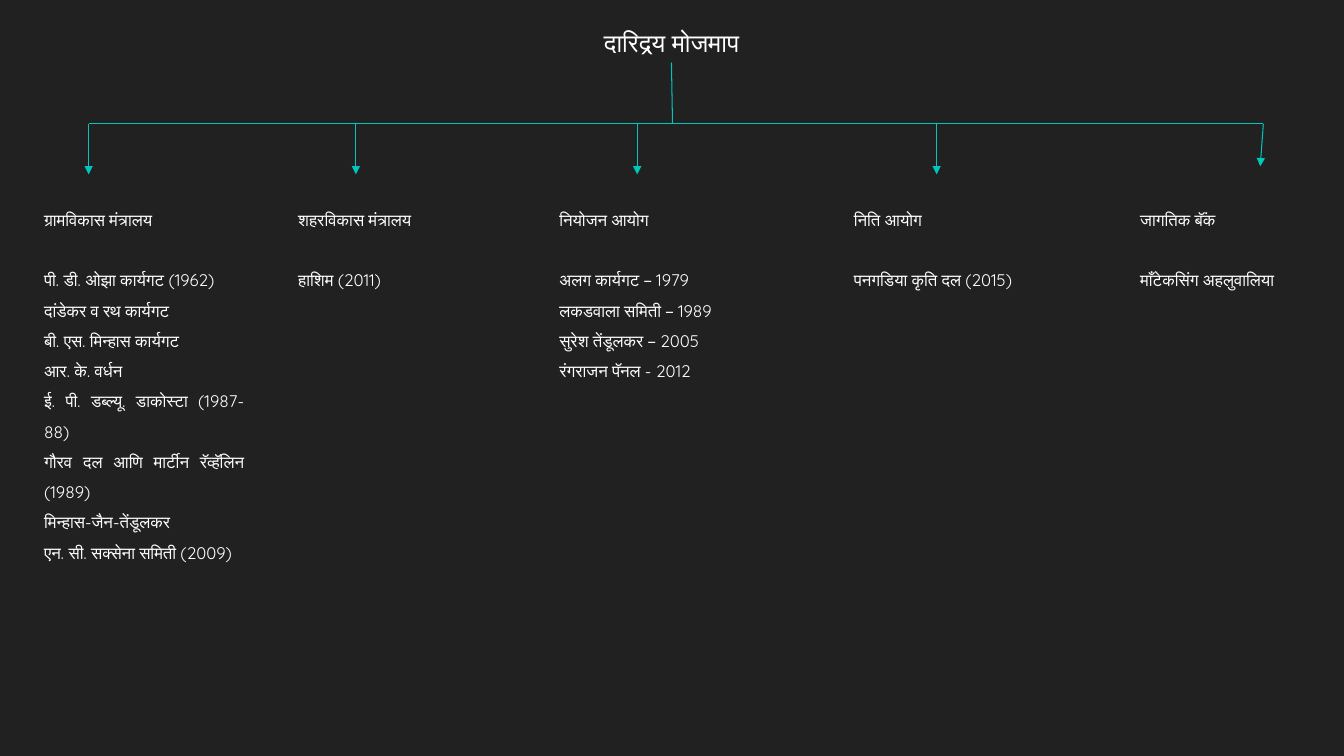
from dataclasses import dataclass

from pptx import Presentation, util as u
from pptx.dml.color import RGBColor
from pptx.enum import shapes, text
from pptx.oxml import ns, xmlchemy as xc


@dataclass(frozen=True)
class Theme:
    ground: RGBColor = RGBColor(0x21, 0x21, 0x21)
    ink: RGBColor = RGBColor(0xFF, 0xFF, 0xFF)
    accent: RGBColor = RGBColor(0x00, 0xC6, 0xBB)
    font: str = "Quicksand"
    title_size: u.Pt = u.Pt(18)
    body_size: u.Pt = u.Pt(12)
    heading_gap: u.Pt = u.Pt(21.6)
    line_width: u.Pt = u.Pt(0.75)
    line_spacing: float = 1.5


@dataclass(frozen=True)
class Branch:
    """One arrow and its column; lengths are per cent of the slide's size."""
    arrow_x: float
    left: float
    width: float
    heading: str
    entries: tuple[str, ...]
    wrapped_lines: int = 0
    tip_shift: float = 0
    tip_y: float = 23.07


THEME = Theme()
WIDTH, HEIGHT = u.Inches(13.33), u.Inches(7.5)
BAR_Y, COLUMN_TOP = 16.4, 25.73
LINE_HEIGHT, BOX_PADDING = 4.0, 1.33

TITLE = "दारिद्रय मोजमाप"
BRANCHES = (
    Branch(6.6, 2.55, 16.35, "ग्रामविकास मंत्रालय", (
        "पी. डी. ओझा कार्यगट (1962)",
        "दांडेकर व रथ कार्यगट",
        "बी. एस. मिन्हास कार्यगट",
        "आर. के. वर्धन",
        "ई. पी. डब्ल्यू. डाकोस्टा (1987-88)",
        "गौरव दल आणि मार्टीन रॅव्हॅलिन (1989)",
        "मिन्हास-जैन-तेंडूलकर",
        "एन. सी. सक्सेना समिती (2009)",
    ), wrapped_lines=2),
    Branch(26.48, 21.45, 11.55, "शहरविकास मंत्रालय", ("हाशिम (2011)",)),
    Branch(47.41, 40.88, 14.1, "नियोजन आयोग", (
        "अलग कार्यगट – 1979",
        "लकडवाला समिती – 1989",
        "सुरेश तेंडूलकर – 2005",
        "रंगराजन पॅनल - 2012",
    )),
    Branch(69.69, 62.79, 14.18, "निति आयोग", ("पनगडिया कृति दल (2015)",)),
    Branch(94, 84.1, 14.18, "जागतिक बॅंक", ("माँटेकसिंग अहलुवालिया",),
           tip_shift=-0.23, tip_y=22),
)


def across(share: float) -> int:
    return round(WIDTH * share / 100)


def down(share: float) -> int:
    return round(HEIGHT * share / 100)


def add_span(para, words: str, size: u.Pt) -> None:
    span = para.add_run()
    span.text = words
    span.font.name = THEME.font
    span.font.size = size
    span.font.color.rgb = THEME.ink


def draw_line(page, x1: float, y1: float, x2: float, y2: float,
              arrow: bool = False) -> None:
    line = page.shapes.add_connector(shapes.MSO_CONNECTOR.STRAIGHT,
                                     across(x1), down(y1), across(x2), down(y2))
    line.line.color.rgb = THEME.accent
    line.line.width = THEME.line_width
    if arrow:
        head = xc.OxmlElement("a:tailEnd")
        head.set("type", "triangle")
        line.line._get_or_add_ln().append(head)
    properties = line._element.find(ns.qn("p:spPr"))
    properties.append(xc.OxmlElement("a:effectLst"))


def draw_title(page) -> None:
    box = page.shapes.title
    box.left, box.top = across(1.88), down(2.93)
    box.width, box.height = across(96.17), down(5.33)
    frame = box.text_frame
    frame.word_wrap = True
    frame.auto_size = text.MSO_AUTO_SIZE.SHAPE_TO_FIT_TEXT
    frame.vertical_anchor = text.MSO_ANCHOR.TOP
    para = frame.paragraphs[0]
    para.alignment = text.PP_ALIGN.CENTER
    para.line_spacing = 1.0
    para.space_before = u.Pt(0)
    add_span(para, TITLE, THEME.title_size)


def draw_branch(page, branch: Branch) -> None:
    draw_line(page, branch.arrow_x, BAR_Y,
              branch.arrow_x + branch.tip_shift, branch.tip_y, arrow=True)
    lines = 2 + len(branch.entries) + branch.wrapped_lines
    box = page.shapes.add_textbox(across(branch.left), down(COLUMN_TOP),
                                  across(branch.width),
                                  down(BOX_PADDING + lines * LINE_HEIGHT))
    frame = box.text_frame
    frame.word_wrap = True
    frame.auto_size = text.MSO_AUTO_SIZE.SHAPE_TO_FIT_TEXT
    for index, words in enumerate((branch.heading, *branch.entries)):
        para = frame.add_paragraph() if index else frame.paragraphs[0]
        para.alignment = text.PP_ALIGN.JUSTIFY
        para.line_spacing = THEME.line_spacing
        para.space_after = u.Pt(0) if index else THEME.heading_gap
        add_span(para, words, THEME.body_size)


def main() -> None:
    deck = Presentation()
    deck.slide_width, deck.slide_height = WIDTH, HEIGHT
    page = deck.slides.add_slide(deck.slide_layouts.get_by_name("Title Only"))
    page.background.fill.solid()
    page.background.fill.fore_color.rgb = THEME.ground

    draw_title(page)
    draw_line(page, 49.96, 8.27, 50.04, BAR_Y)
    draw_line(page, BRANCHES[0].arrow_x, BAR_Y, BRANCHES[-1].arrow_x, BAR_Y)
    for branch in BRANCHES:
        draw_branch(page, branch)
    deck.save("out.pptx")


if __name__ == "__main__":
    main()
